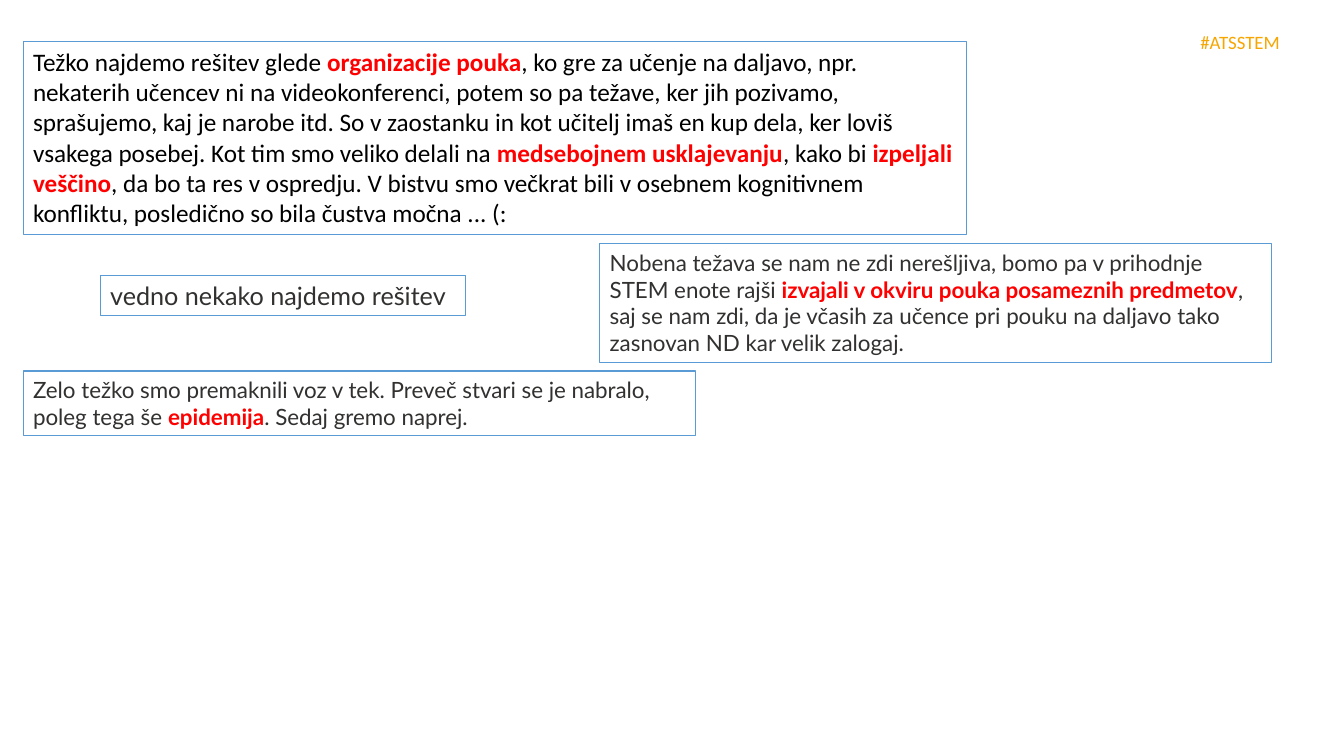
from pptx import Presentation
from pptx.dml.color import RGBColor
from pptx.enum.text import MSO_AUTO_SIZE
from pptx.util import Pt

PAGE_SIZE = (960, 540)
EMPHASIS = "FF0000"
OUTLINE = "5B9BD5"
BLACK, GREY, ORANGE = "000000", "323130", "F7A601"

HASHTAG = {
    "at": (850.3, 18, 71.3, 23.8), "font": ("Calibri", 13.5, ORANGE),
    "wrap": False, "outline": None, "fill": None,
    "text": ["#ATSSTEM"],
}
# Every second piece of a text is emphasised.
QUOTES = [
    {
        "at": (16.5, 29.5, 674, 138.2), "font": ("Calibri", 18, BLACK), "fill": None,
        "text": [
            "Težko najdemo rešitev glede ",
            "organizacije pouka",
            ", ko gre za učenje na daljavo, npr. nekaterih učencev ni na videokonferenci, "
            "potem so pa težave, ker jih pozivamo, sprašujemo, kaj je narobe itd. So v "
            "zaostanku in kot učitelj imaš en kup dela, ker loviš vsakega posebej. Kot tim "
            "smo veliko delali na ",
            "medsebojnem usklajevanju",
            ", kako bi ",
            "izpeljali veščino",
            ", da bo ta res v ospredju. V bistvu smo večkrat bili v osebnem kognitivnem "
            "konfliktu, posledično so bila čustva močna ... (:",
        ],
    },
    {
        "at": (428.4, 174.2, 480, 85), "font": ("Lato", 16, GREY), "fill": "FFFFFF",
        "text": [
            "Nobena težava se nam ne zdi nerešljiva, bomo pa v prihodnje STEM enote rajši ",
            "izvajali v okviru pouka posameznih predmetov",
            ", saj se nam zdi, da je včasih za učence pri pouku na daljavo tako zasnovan ND "
            "kar velik zalogaj.",
        ],
    },
    {
        "at": (71.6, 196.6, 260.6, 28.8), "font": ("Lato", 18, GREY), "fill": None,
        "text": ["vedno nekako najdemo rešitev"],
    },
    {
        "at": (16.5, 265, 480, 46), "font": ("Lato", 16, GREY), "fill": "FFFFFF",
        "text": [
            "Zelo težko smo premaknili voz v tek. Preveč stvari se je nabralo, poleg tega še ",
            "epidemija",
            ". Sedaj gremo naprej.",
        ],
    },
]


def set_color(target, value):
    target.rgb = RGBColor.from_string(value)


def add_note(page, note):
    box = page.shapes.add_textbox(*map(Pt, note["at"]))
    if note["fill"]:
        box.fill.solid()
        set_color(box.fill.fore_color, note["fill"])
    outline = note.get("outline", OUTLINE)
    if outline:
        set_color(box.line.color, outline)
        box.line.width = Pt(0.75)
    frame = box.text_frame
    frame.word_wrap = note.get("wrap", True)
    frame.auto_size = MSO_AUTO_SIZE.SHAPE_TO_FIT_TEXT
    para = frame.paragraphs[0]
    family, size, color = note["font"]
    for index, words in enumerate(note["text"]):
        emphasised = index % 2 == 1
        span = para.add_run()
        span.text = words
        formats = {"name": family, "size": Pt(size), "bold": emphasised}
        for key, value in formats.items():
            setattr(span.font, key, value)
        set_color(span.font.color, EMPHASIS if emphasised else color)


def main():
    deck = Presentation()
    deck.slide_width, deck.slide_height = map(Pt, PAGE_SIZE)
    page = deck.slides.add_slide(deck.slide_layouts[6])
    for note in [HASHTAG, *QUOTES]:
        add_note(page, note)
    deck.save("out.pptx")


if __name__ == "__main__":
    main()
